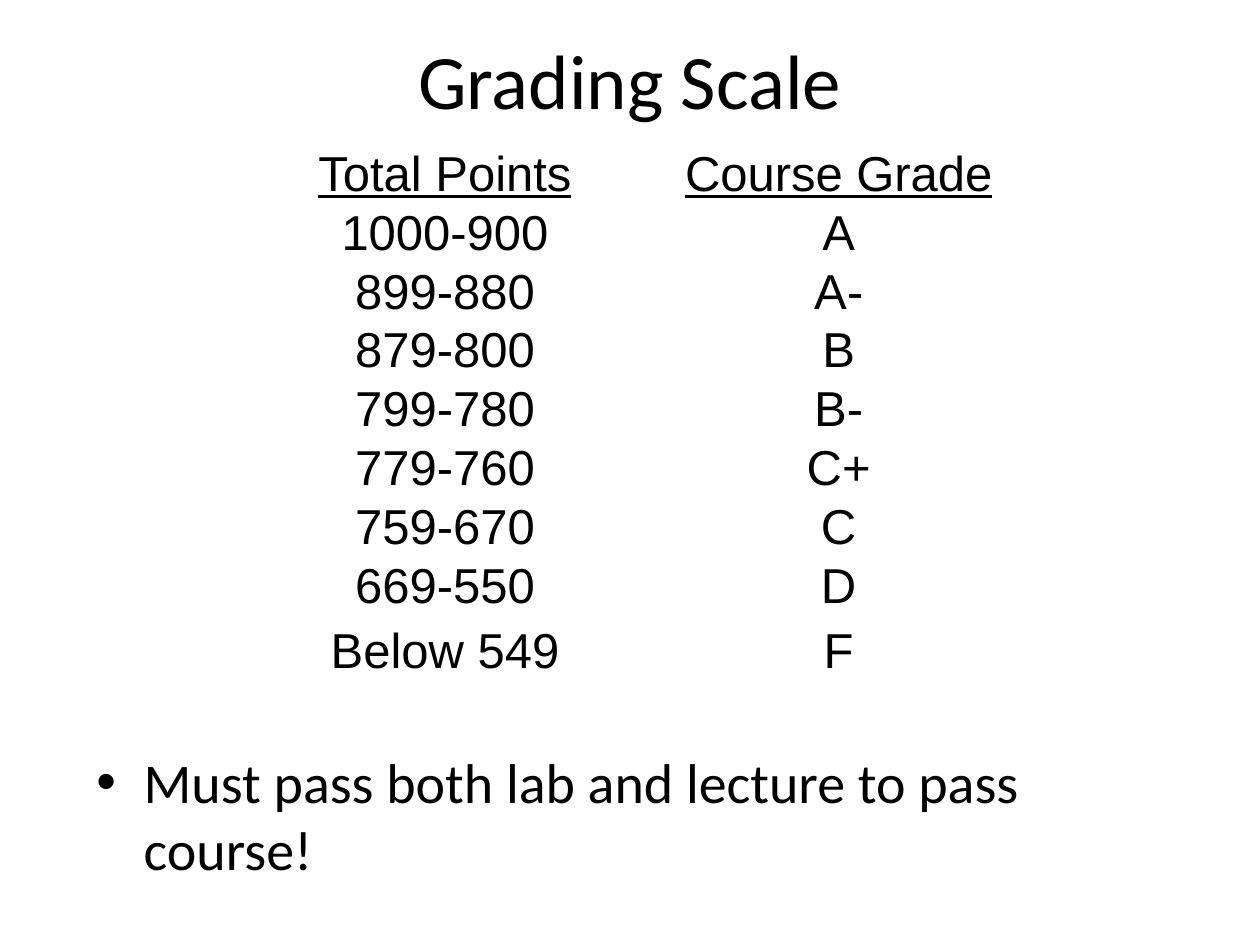
from lxml import etree
from pptx import Presentation
from pptx.dml.color import RGBColor
from pptx.enum.text import MSO_ANCHOR, PP_ALIGN
from pptx.oxml.ns import qn
from pptx.util import Pt

BLACK = RGBColor(0x00, 0x00, 0x00)
CENTER = PP_ALIGN.CENTER
MIDDLE = MSO_ANCHOR.MIDDLE

GRADES = [
    (["Total Points"], ["Course Grade"]),
    (["1000-900"], ["A"]),
    (["899-880"], ["A-"]),
    (["879-800"], ["B"]),
    (["799-780"], ["B-"]),
    (["779-760"], ["C+"]),
    (["759-670"], ["C"]),
    (["669-550", "Below 549"], ["D", "F"]),
]
COLUMN_WIDTHS = [220.5, 229.5]
ROW_HEIGHT = 33.6
LAST_ROW_HEIGHT = 82.8


def add_run(paragraph, text, font_name, size):
    run = paragraph.add_run()
    run.text = text
    run.font.name = font_name
    run.font.size = Pt(size)
    run.font.bold = False
    run.font.color.rgb = BLACK
    return run


presentation = Presentation()
presentation.slide_width = Pt(720)
presentation.slide_height = Pt(540)
slide = presentation.slides.add_slide(presentation.slide_layouts[6])

title = slide.shapes.add_textbox(Pt(54), Pt(0), Pt(612), Pt(90))
title.text_frame.word_wrap = True
title.text_frame.vertical_anchor = MIDDLE
paragraph = title.text_frame.paragraphs[0]
paragraph.alignment = CENTER
add_run(paragraph, "Grading Scale", "Calibri", 44)

note = slide.shapes.add_textbox(Pt(48), Pt(423.5), Pt(612), Pt(86))
note.text_frame.word_wrap = True
paragraph = note.text_frame.paragraphs[0]
add_run(paragraph, "Must pass both lab and lecture to pass course!", "Calibri", 32)
properties = paragraph._p.get_or_add_pPr()
properties.set("marL", str(Pt(27)))
properties.set("indent", str(-Pt(27)))
etree.SubElement(properties, qn("a:buFont"), typeface="Arial")
etree.SubElement(properties, qn("a:buChar"), char="•")

table_height = ROW_HEIGHT * (len(GRADES) - 1) + LAST_ROW_HEIGHT
table = slide.shapes.add_table(
    len(GRADES), len(COLUMN_WIDTHS),
    Pt(144), Pt(84), Pt(sum(COLUMN_WIDTHS)), Pt(table_height),
).table
table.first_row = False
table.horz_banding = False
for column, width in zip(table.columns, COLUMN_WIDTHS):
    column.width = Pt(width)

for row_index, grade_row in enumerate(GRADES):
    is_last = row_index == len(GRADES) - 1
    table.rows[row_index].height = Pt(LAST_ROW_HEIGHT if is_last else ROW_HEIGHT)
    for column_index, lines in enumerate(grade_row):
        cell = table.cell(row_index, column_index)
        cell.fill.background()
        cell.margin_left = cell.margin_right = Pt(5)
        cell.margin_top = cell.margin_bottom = Pt(0)
        for line_index, line in enumerate(lines):
            frame = cell.text_frame
            paragraph = frame.add_paragraph() if line_index else frame.paragraphs[0]
            paragraph.alignment = CENTER
            paragraph.space_after = Pt(6)
            run = add_run(paragraph, line, "Arial", 28)
            run.font.underline = row_index == 0

presentation.save("out.pptx")
